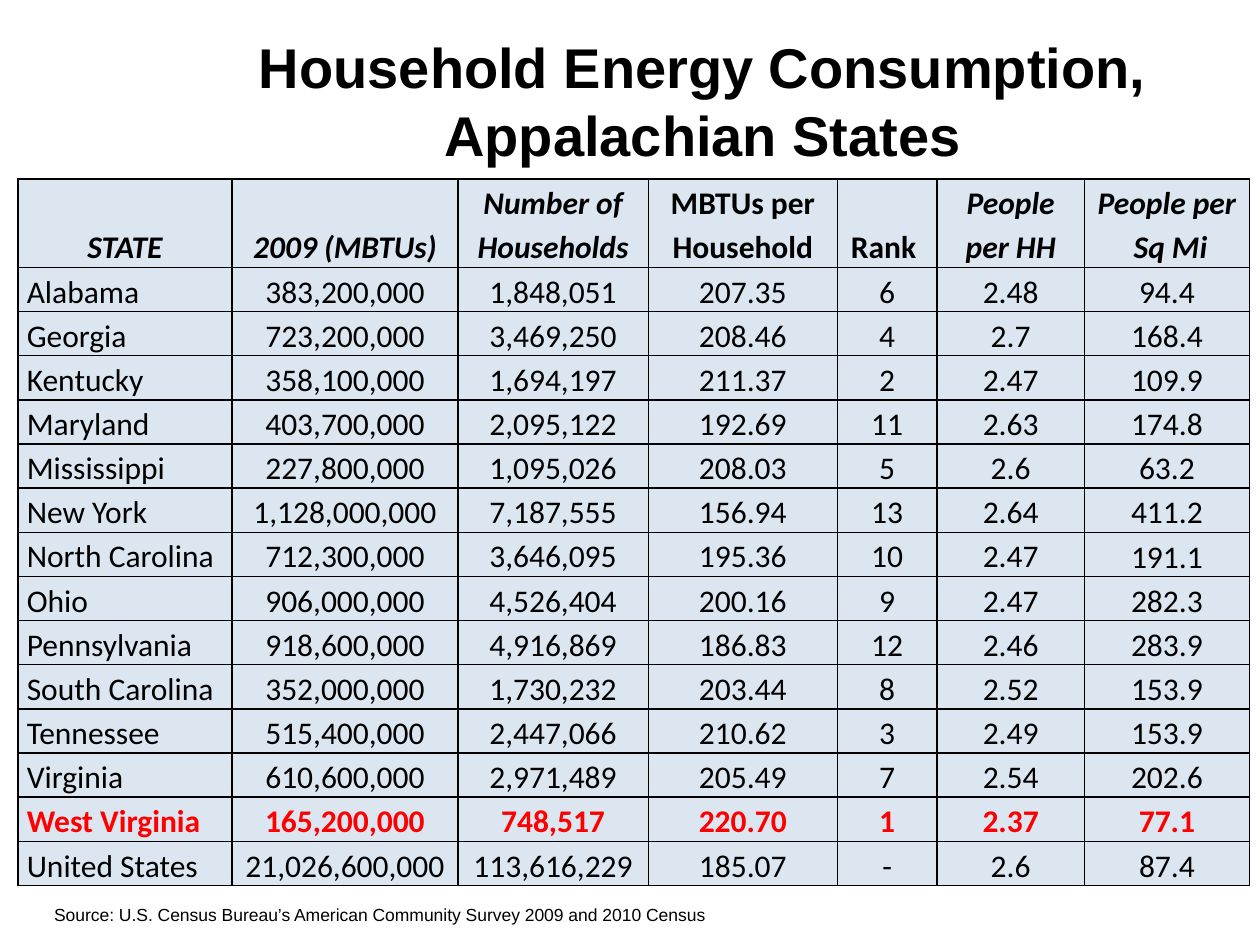
from dataclasses import dataclass

from lxml import etree
from pptx import Presentation
from pptx.dml.color import RGBColor
from pptx.enum.text import MSO_ANCHOR, PP_ALIGN
from pptx.oxml.ns import qn
from pptx.util import Cm, Pt

LEFT, CENTER = PP_ALIGN.LEFT, PP_ALIGN.CENTER
TOP, MIDDLE, BOTTOM = MSO_ANCHOR.TOP, MSO_ANCHOR.MIDDLE, MSO_ANCHOR.BOTTOM


@dataclass(frozen=True)
class Theme:
    ink: str = "000000"
    accent: str = "FF0000"
    cell_fill: str = "DCE6F1"
    heading_font: str = "Arial"
    table_font: str = "Calibri"
    title_size: int = 32
    table_size: int = 18
    source_size: int = 10
    border_width: int = 1
    line_spacing: float = 1.15


@dataclass(frozen=True)
class TextStyle:
    font: str
    size: int
    color: str
    bold: bool = False
    italic: bool = False
    align: PP_ALIGN = CENTER


@dataclass(frozen=True)
class Label:
    text: str
    left: float
    top: float
    width: float
    height: float
    style: TextStyle


@dataclass(frozen=True)
class Column:
    heading: str
    width: float
    italic: bool = True
    align: PP_ALIGN = CENTER
    anchor: MSO_ANCHOR = BOTTOM


THEME = Theme()
TABLE_LEFT, TABLE_TOP = 0.36, 3.61
HEADER_HEIGHT, ROW_HEIGHT = 1.78, 0.89
SIDE_MARGIN = 0.18
HIGHLIGHT = "West Virginia"

LABELS = [
    Label("Household Energy Consumption, Appalachian States", 2.74, 0.43, 22.86, 3.18,
          TextStyle(THEME.heading_font, THEME.title_size, THEME.ink, bold=True)),
    Label("Source: U.S. Census Bureau’s American Community Survey 2009 and 2010 Census",
          0.84, 18.06, 13.77, 0.76,
          TextStyle(THEME.heading_font, THEME.source_size, THEME.ink, align=LEFT)),
]

COLUMNS = [
    Column("STATE", 4.32, align=LEFT),
    Column("2009 (MBTUs)", 4.55),
    Column("Number of Households", 3.84),
    Column("MBTUs per Household", 3.81, italic=False),
    Column("Rank ", 2.01, italic=False),
    Column("People per HH", 2.97),
    Column("People per\n Sq Mi", 3.33, anchor=TOP),
]

STATES = [
    ("Alabama", "383,200,000", "1,848,051", "207.35", "6", "2.48", "94.4"),
    ("Georgia", "723,200,000", "3,469,250", "208.46", "4", "2.7", "168.4"),
    ("Kentucky", "358,100,000", "1,694,197", "211.37", "2", "2.47", "109.9"),
    ("Maryland", "403,700,000", "2,095,122", "192.69", "11", "2.63", "174.8"),
    ("Mississippi", "227,800,000", "1,095,026", "208.03", "5", "2.6", "63.2"),
    ("New York", "1,128,000,000", "7,187,555", "156.94", "13", "2.64", "411.2"),
    ("North Carolina", "712,300,000", "3,646,095", "195.36", "10", "2.47", "191.1"),
    ("Ohio", "906,000,000", "4,526,404", "200.16", "9", "2.47", "282.3"),
    ("Pennsylvania", "918,600,000", "4,916,869", "186.83", "12", "2.46", "283.9"),
    ("South Carolina", "352,000,000", "1,730,232", "203.44", "8", "2.52", "153.9"),
    ("Tennessee", "515,400,000", "2,447,066", "210.62", "3", "2.49", "153.9"),
    ("Virginia", "610,600,000", "2,971,489", "205.49", "7", "2.54", "202.6"),
    (HIGHLIGHT, "165,200,000", "748,517", "220.70", "1", "2.37", "77.1"),
    ("United States", "21,026,600,000", "113,616,229", "185.07", "-", "2.6", "87.4"),
]


def write_text(tf, text: str, style: TextStyle, spacing: float = 1.0) -> None:
    tf.text = text
    tf.word_wrap = True
    for p in tf.paragraphs:
        p.alignment = style.align
        p.line_spacing = spacing
        p.font.name = style.font
        p.font.size = Pt(style.size)
        p.font.bold = style.bold
        p.font.italic = style.italic
        p.font.color.rgb = RGBColor.from_string(style.color)


def add_label(s, label: Label) -> None:
    box = s.shapes.add_textbox(Cm(label.left), Cm(label.top), Cm(label.width), Cm(label.height))
    box.text_frame.vertical_anchor = MIDDLE
    write_text(box.text_frame, label.text, label.style)


def add_borders(cell) -> None:
    tc_pr = cell._tc.get_or_add_tcPr()
    for side in ("lnL", "lnR", "lnT", "lnB"):
        line = etree.SubElement(tc_pr, qn(f"a:{side}"), w=str(Pt(THEME.border_width)))
        fill = etree.SubElement(line, qn("a:solidFill"))
        etree.SubElement(fill, qn("a:srgbClr"), val=THEME.ink)


def fill_cell(cell, text: str, style: TextStyle, anchor: MSO_ANCHOR) -> None:
    cell.margin_left = cell.margin_right = Cm(SIDE_MARGIN)
    cell.margin_top = cell.margin_bottom = Cm(0)
    cell.vertical_anchor = anchor
    add_borders(cell)
    cell.fill.solid()
    cell.fill.fore_color.rgb = RGBColor.from_string(THEME.cell_fill)
    write_text(cell.text_frame, text, style, THEME.line_spacing)


def add_energy_table(s) -> None:
    width = sum(column.width for column in COLUMNS)
    height = HEADER_HEIGHT + ROW_HEIGHT * len(STATES)
    table = s.shapes.add_table(len(STATES) + 1, len(COLUMNS), Cm(TABLE_LEFT), Cm(TABLE_TOP),
                               Cm(width), Cm(height)).table
    table.first_row = table.horz_banding = False
    for row in table.rows:
        row.height = Cm(ROW_HEIGHT)
    table.rows[0].height = Cm(HEADER_HEIGHT)
    for c, column in enumerate(COLUMNS):
        table.columns[c].width = Cm(column.width)
        heading = TextStyle(THEME.table_font, THEME.table_size, THEME.ink, True, column.italic)
        fill_cell(table.cell(0, c), column.heading, heading, BOTTOM)
        for r, state in enumerate(STATES, 1):
            marked = state[0] == HIGHLIGHT
            style = TextStyle(THEME.table_font, THEME.table_size,
                              THEME.accent if marked else THEME.ink, marked, align=column.align)
            fill_cell(table.cell(r, c), state[c], style, column.anchor)


def main() -> None:
    """Build the household energy consumption slide."""
    prs = Presentation()
    prs.slide_width, prs.slide_height = Cm(25.4), Cm(19.05)
    s = prs.slides.add_slide(prs.slide_layouts[6])
    title, source = LABELS
    add_label(s, title)
    add_energy_table(s)
    add_label(s, source)
    prs.save("out.pptx")


if __name__ == "__main__":
    main()
